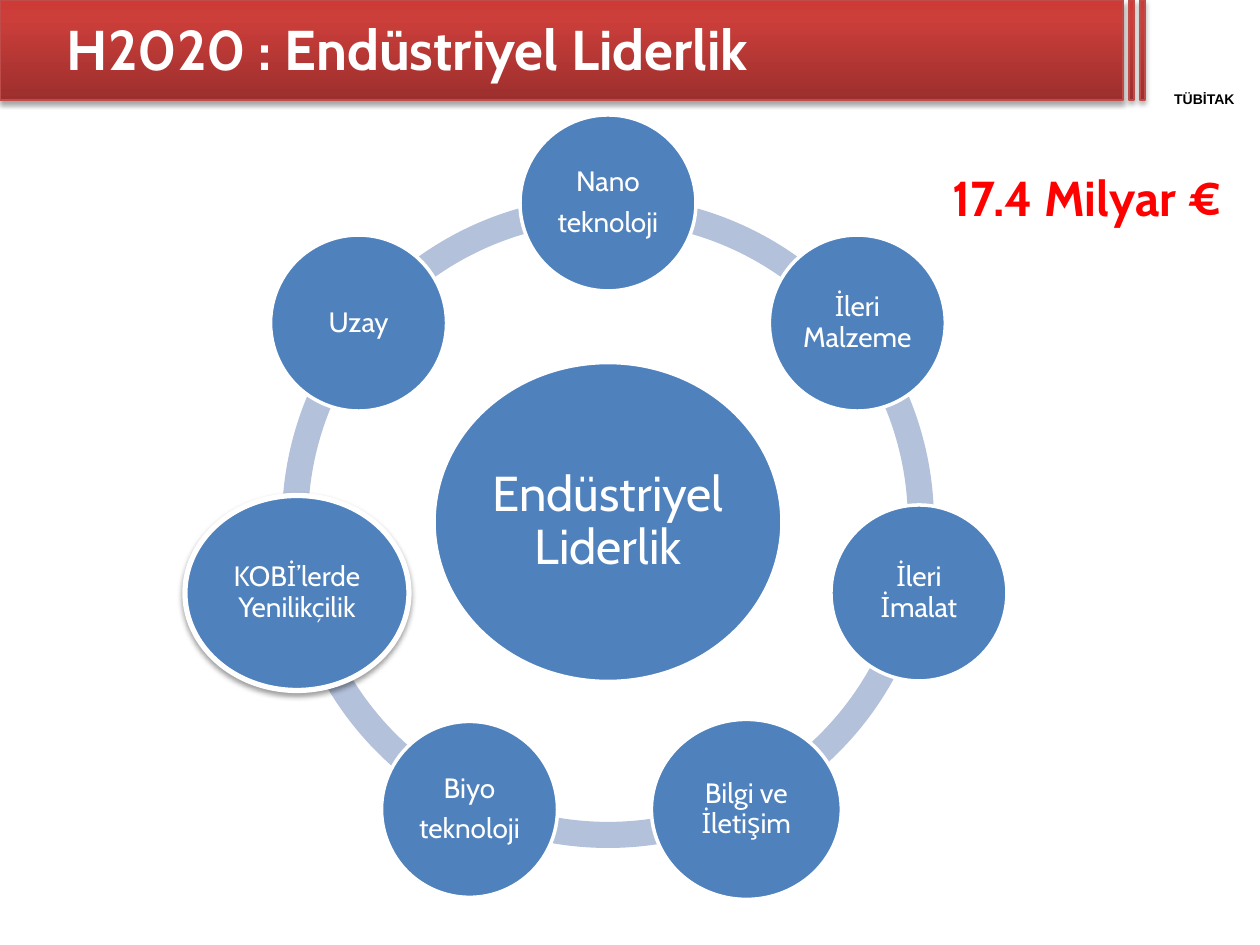
from copy import deepcopy
from math import cos, radians, sin

from lxml.etree import SubElement as Sub
from pptx import Presentation as Deck
from pptx.dml.color import RGBColor as Rgb
from pptx.enum.shapes import MSO_SHAPE as Kind
from pptx.enum.text import MSO_ANCHOR as Anchor, PP_ALIGN as Align
from pptx.oxml.ns import qn
from pptx.util import Pt

SCALE = 914400 / 126
HUE = {
    "dark": "9C2F2D", "red": "CB3E3A", "top": "CE3B37", "edge": "BF4C48",
    "ring": "B3C1DB", "node": "4F81BD", "white": "FFFFFF",
    "black": "000000", "sum": "FF0000",
}
NODES = [
    ("Nano\nteknoloji", 176, 176),
    ("İleri Malzeme", 176, 176),
    ("İleri İmalat", 176, 176),
    ("Bilgi ve İletişim", 190, 180),
    ("Biyo\nteknoloji", 176, 176),
    ("KOBİ’lerde Yenilikçilik", 224, 195),
    ("Uzay", 176, 176),
]


def px(num):
    return round(num * SCALE)


def tint(name):
    return Rgb.from_string(HUE[name])


def put(item, vals):
    for key, val in vals.items():
        setattr(item, key, val)


def write(shape, text, size, hue, face="Cabin", bold=False, pad=None,
          anchor=Anchor.MIDDLE, para=None):
    frame = shape.text_frame
    frame.text = text
    put(frame, {"word_wrap": True, "vertical_anchor": anchor})
    if pad is not None:
        sides = ("left", "top", "right", "bottom")
        put(frame, {f"margin_{side}": px(pad) for side in sides})
    for line in frame.paragraphs:
        put(line, para or {"alignment": Align.LEFT})
        put(line.font, {"name": face, "size": Pt(size), "bold": bold})
        line.font.color.rgb = tint(hue)


def draw(slide, kind, box, fill=None, line=None, width=1):
    shape = slide.shapes.add_shape(kind, *map(px, box))
    shape.shadow.inherit = False
    if fill:
        shape.fill.solid()
        shape.fill.fore_color.rgb = tint(fill)
    if line:
        shape.line.color.rgb = tint(line)
        shape.line.width = Pt(width)
    else:
        shape.line.fill.background()
    return shape


def shade(shape, alpha, dist):
    effect = shape._element.spPr.find(qn("a:effectLst"))
    outer = Sub(effect, qn("a:outerShdw"), blurRad=str(Pt(3.1)),
                dist=str(Pt(dist)), dir="5400000", rotWithShape="0")
    color = Sub(outer, qn("a:srgbClr"), val=HUE["black"])
    Sub(color, qn("a:alpha"), val=str(alpha * 1000))


def strip(slide, box):
    shape = draw(slide, Kind.RECTANGLE, box, line="edge", width=0.75)
    fill = shape.fill
    fill.gradient()
    fill.gradient_angle = 90
    stops = shape._element.spPr.find(".//" + qn("a:gsLst"))
    stops.append(deepcopy(stops[-1]))
    marks = [(0, "dark"), (0.8, "red"), (1, "top")]
    for stop, (spot, hue) in zip(fill.gradient_stops, marks):
        stop.position = spot
        stop.color.rgb = tint(hue)
    shade(shape, 35, 1.8)


def label(slide, box, text, size, hue, **form):
    shape = slide.shapes.add_textbox(*map(px, box))
    write(shape, text, size, hue, bold=True, anchor=Anchor.TOP, **form)


def header(slide, box):
    left, top, wide, high = box
    for start, span in ((0, 1123), (1129, 5), (1140, 5)):
        strip(slide, (left + start, top, span, high))
    label(slide, (left + wide - 111, top + 91, 111, 16), "TÜBİTAK", 8,
          "black", face="Arial", pad=0, para={"alignment": Align.CENTER})
    title = slide.shapes.title
    spot = map(px, (left + 54, top, 1071, 97))
    put(title, dict(zip(("left", "top", "width", "height"), spot)))
    write(title, "H2020 : Endüstriyel Liderlik", 32, "white", bold=True)
    slide.shapes._spTree.append(title._element)


def disc(slide, mid, text, wide, high, size, pad, rim=2):
    box = (mid[0] - wide / 2, mid[1] - high / 2, wide, high)
    shape = draw(slide, Kind.OVAL, box, "node", "white", rim)
    para = {"alignment": Align.CENTER, "line_spacing": 0.9,
            "space_after": Pt(size * 0.35)}
    write(shape, text, size, "white", pad=pad, para=para)
    return shape


def wheel(slide, box):
    left, top, wide, high = box
    mid = (left + wide / 2, top + high / 2)
    step = 360 / len(NODES)
    for num in reversed(range(len(NODES))):
        arc = draw(slide, Kind.BLOCK_ARC, box, "ring")
        ends = [(270 + step * turn) % 360 for turn in (num, num + 1)]
        for spot, deg in enumerate(ends):
            arc.adjustments[spot] = deg * 0.6
        arc.adjustments[2] = 0.04
    disc(slide, mid, "Endüstriyel Liderlik", 348, 319, 28, 5)
    reach = wide / 2 - 7
    for num, (text, span, tall) in enumerate(NODES):
        turn = radians(step * num - 90)
        hub = (mid[0] + reach * cos(turn), mid[1] + reach * sin(turn))
        main = text.startswith("KOBİ")
        shape = disc(slide, hub, text, span, tall, 16, 3, 3 if main else 2)
        if main:
            shade(shape, 38, 1.6)


def main():
    deck = Deck()
    put(deck, {"slide_width": px(1260), "slide_height": px(945)})
    slide = deck.slides.add_slide(deck.slide_layouts[5])
    header(slide, (0, 0, 1260, 100))
    wheel(slide, (282, 196, 652, 652))
    label(slide, (940, 161, 318, 72), "17.4 Milyar €", 28, "sum")
    deck.save("out.pptx")


if __name__ == "__main__":
    main()
